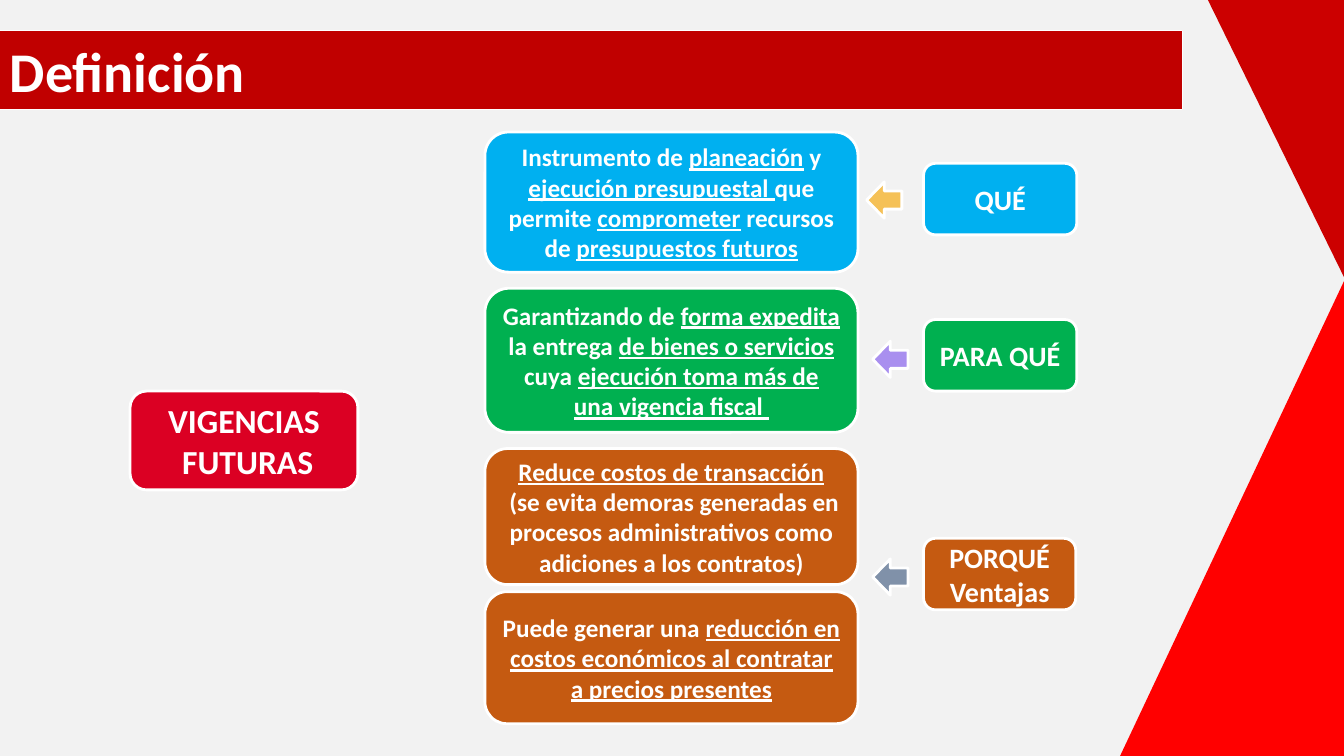
from pptx import Presentation
from pptx.dml.color import RGBColor
from pptx.enum.shapes import MSO_SHAPE
from pptx.enum.text import MSO_ANCHOR, PP_ALIGN
from pptx.util import Inches, Pt

WHITE, BLUE, GREEN, BROWN = "FFFFFF", "00B0F0", "00B050", "C55A11"


def add_shape(kind, left, top, width, height, fill, line_width=0):
    sp = s.shapes.add_shape(kind, Inches(left), Inches(top), Inches(width), Inches(height))
    sp.shadow.inherit = False
    sp.fill.solid()
    sp.fill.fore_color.rgb = RGBColor.from_string(fill)
    if line_width:
        sp.line.color.rgb = RGBColor.from_string(WHITE)
        sp.line.width = Pt(line_width)
    else:
        sp.line.fill.background()
    return sp


def write(sp, lines, size, align=PP_ALIGN.CENTER):
    """Fill a shape with bold white paragraphs; text between underscores is underlined."""
    tf = sp.text_frame
    tf.word_wrap = True
    tf.vertical_anchor = MSO_ANCHOR.MIDDLE
    for i, line in enumerate(lines):
        p = tf.paragraphs[0] if i == 0 else tf.add_paragraph()
        p.alignment = align
        p.font.name, p.font.size, p.font.bold = "Calibri", Pt(size), True
        p.font.color.rgb = RGBColor.from_string(WHITE)
        for j, part in enumerate(line.split("_")):
            if part:
                r = p.add_run()
                r.text = part
                r.font.underline = j % 2 == 1


prs = Presentation()
prs.slide_width, prs.slide_height = Inches(13.33), Inches(7.5)
s = prs.slides.add_slide(prs.slide_layouts[6])
s.background.fill.solid()
s.background.fill.fore_color.rgb = RGBColor.from_string("F2F2F2")

# Red triangles on the right edge
lower = add_shape(MSO_SHAPE.RIGHT_TRIANGLE, 11.11, 2.77, 2.23, 4.73, "FF0000")
lower._element.spPr.xfrm.set("flipH", "1")
upper = add_shape(MSO_SHAPE.RIGHT_TRIANGLE, 11.98, 0, 1.36, 2.77, "CC0000")
upper.rotation = 180

title = add_shape(MSO_SHAPE.RECTANGLE, 0, 0.3, 11.73, 0.79, "C00000", 0.75)
write(title, ["Definición"], 40, PP_ALIGN.LEFT)

# Rounded boxes: left, top, width, height, fill, text size, paragraphs
boxes = [
    (1.29, 3.88, 2.26, 0.98, "DB0023", 24, ["VIGENCIAS", " FUTURAS"]),
    (4.81, 1.31, 3.7, 1.39, BLUE, 18,
     ["Instrumento de _planeación_ y _ejecución presupuestal _que permite "
      "_comprometer_ recursos de _presupuestos futuros_"]),
    (4.81, 2.86, 3.7, 1.43, GREEN, 18,
     ["Garantizando de _forma expedita _la entrega _de bienes o servicios _cuya "
      "_ejecución toma más de una vigencia fiscal _"]),
    (4.81, 4.45, 3.7, 1.35, BROWN, 18,
     ["_Reduce costos de transacción_",
      " (se evita demoras generadas en procesos administrativos como "
      "adiciones a los contratos)"]),
    (4.81, 5.87, 3.7, 1.31, BROWN, 18,
     ["Puede generar una _reducción en costos económicos al contratar "
      "a precios presentes_"]),
    (9.16, 1.62, 1.52, 0.71, BLUE, 20, ["QUÉ"]),
    (9.16, 3.17, 1.52, 0.71, GREEN, 20, ["PARA QUÉ"]),
    (9.16, 5.34, 1.51, 0.71, BROWN, 20, ["PORQUÉ", "Ventajas"]),
]
for left, top, width, height, fill, size, lines in boxes:
    box = add_shape(MSO_SHAPE.ROUNDED_RECTANGLE, left, top, width, height, fill, 2)
    write(box, lines, size)

# Arrows from each question to its answer
for left, top, fill in [(8.59, 1.81, "F5C157"), (8.65, 3.39, "A98FEF"), (8.65, 5.55, "8091A9")]:
    arrow = add_shape(MSO_SHAPE.DOWN_ARROW, left, top, 0.36, 0.35, fill, 2)
    arrow.rotation = 90

prs.save("out.pptx")
